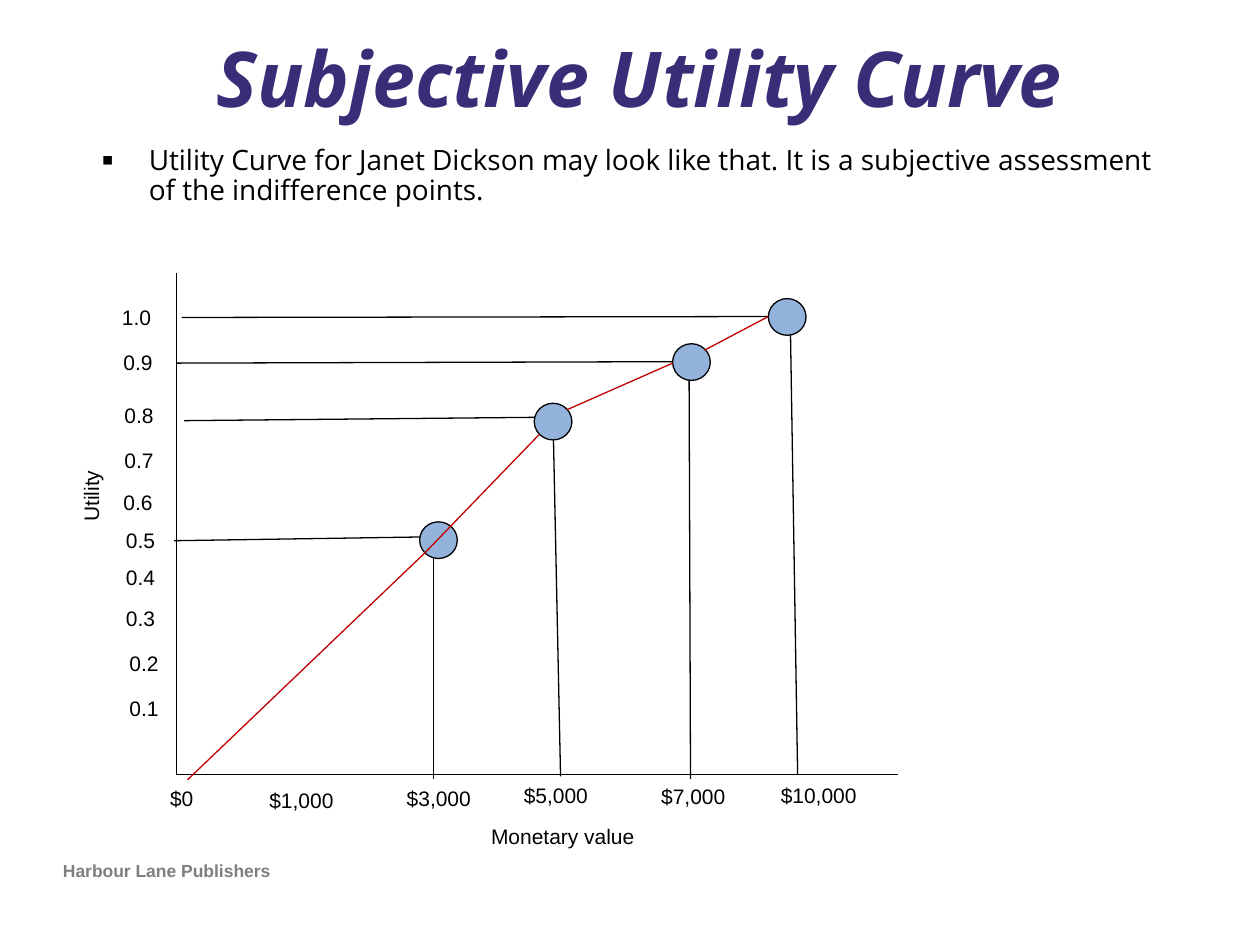
from pptx import Presentation
from pptx.dml.color import RGBColor
from pptx.enum import shapes, text
from pptx.oxml import parse_xml
from pptx.oxml.ns import nsdecls, qn
from pptx.util import Cm, Pt

BLACK = RGBColor(0, 0, 0)
PURPLE = RGBColor(0x3A, 0x2C, 0x76)
GREY = RGBColor(0x7F, 0x7F, 0x7F)
BLUE = RGBColor(0x93, 0xB3, 0xDD)
RED = RGBColor(0xC0, 0, 0)

LABEL = dict(name="Arial", size=Pt(12))
TITLE = dict(name="Open Sans", size=Pt(44), bold=True, italic=True)
BODY = dict(name="Open Sans", size=Pt(16))
FOOTER = dict(name="Arial", size=Pt(10), bold=True)

# All positions are in centimetres.
LABEL_H = 0.76
DOT_W, DOT_H = 0.76, 0.74
Y_LABEL_W = 1.45

TITLE_TEXT = " Subjective Utility Curve"
BODY_TEXT = ("Utility Curve for Janet Dickson may look like that. "
             "It is a subjective assessment of the indifference points.")
FOOTER_TEXT = "Harbour Lane Publishers"

AXES = [(3.56, 15.62, 18.11, 15.62), (3.56, 5.51, 3.56, 15.62)]
X_LABELS = [  # text, left, top, width
    ("$0", 3.18, 15.72, 1.22),
    ("$1,000", 5.18, 15.75, 1.96),
    ("$3,000", 7.95, 15.72, 1.96),
    ("$5,000", 10.31, 15.65, 1.96),
    ("$7,000", 13.08, 15.67, 1.96),
    ("$10,000", 15.49, 15.65, 2.36),
]
Y_LABELS = [  # text, left, top
    ("0.1", 2.36, 13.89), ("0.2", 2.36, 12.98), ("0.3", 2.29, 12.09),
    ("0.4", 2.29, 11.25), ("0.5", 2.29, 10.52), ("0.6", 2.24, 9.75),
    ("0.7", 2.26, 8.89), ("0.8", 2.26, 8.0), ("0.9", 2.24, 6.93),
    ("1.0", 2.21, 6.02),
]
POINTS = [  # line down to the money axis, line across to utility, dot corner
    ((15.93, 6.38, 16.08, 15.62), (3.66, 6.4, 15.93, 6.38), (15.49, 6.02)),
    ((13.89, 7.24, 13.92, 15.7), (3.56, 7.32, 13.89, 7.29), (13.56, 6.93)),
    ((11.15, 8.51, 11.3, 15.65), (3.71, 8.48, 11.07, 8.41), (10.77, 8.13)),
    ((8.74, 10.8, 8.74, 15.7), (3.51, 10.9, 8.79, 10.82), (8.46, 10.52)),
]
CURVE = [
    (3.78, 15.72, 8.56, 11.15),
    (8.56, 11.15, 10.87, 8.76),
    (11.43, 8.26, 13.56, 7.32),
    (14.2, 7.06, 15.49, 6.38),
]


def add_text(s, content, box, style, color=BLACK):
    sp = s.shapes.add_textbox(*map(Cm, box))
    tf = sp.text_frame
    tf.word_wrap = True
    p = tf.paragraphs[0]
    r = p.add_run()
    r.text = content
    for key, value in style.items():
        setattr(r.font, key, value)
    r.font.color.rgb = color
    return sp


def add_line(s, ends, color=BLACK):
    line = s.shapes.add_connector(shapes.MSO_CONNECTOR.STRAIGHT, *map(Cm, ends))
    line.line.color.rgb = color
    line.line.width = Pt(0.75)
    line._element.spPr.append(parse_xml(f"<a:effectLst {nsdecls('a')}/>"))


def add_dot(s, left, top):
    sp = s.shapes.add_shape(shapes.MSO_SHAPE.OVAL,
                            *map(Cm, (left, top, DOT_W, DOT_H)))
    sp.shadow.inherit = False
    sp.fill.solid()
    sp.fill.fore_color.rgb = BLUE
    sp.line.color.rgb = BLACK
    sp.line.width = Pt(0.75)


def add_bullet(p, indent):
    pPr = p._p.get_or_add_pPr()
    pPr.set("marL", str(indent))
    pPr.set("indent", str(-indent))
    for tag, key, value in (("a:buSzPct", "val", "123000"),
                            ("a:buFont", "typeface", "Arial"),
                            ("a:buChar", "char", "▪")):
        pPr.append(parse_xml(f'<{tag} {nsdecls("a")} {key}="{value}"/>'))


def main():
    prs = Presentation()
    prs.slide_width, prs.slide_height = Cm(25.4), Cm(19.05)
    s = prs.slides.add_slide(prs.slide_layouts[6])

    title = add_text(s, TITLE_TEXT, (1.9, 0.76, 21.6, 1.83), TITLE, PURPLE)
    title.text_frame.vertical_anchor = text.MSO_ANCHOR.MIDDLE
    p = title.text_frame.paragraphs[0]
    p.alignment = text.PP_ALIGN.CENTER
    p.line_spacing = 0.9

    body = add_text(s, BODY_TEXT, (1.8, 2.82, 21.8, 12.8), BODY)
    p = body.text_frame.paragraphs[0]
    p.line_spacing = 0.9
    add_bullet(p, Cm(0.95))

    add_text(s, FOOTER_TEXT, (1.02, 17.22, 10.52, 0.71), FOOTER, GREY)

    for ends in AXES:
        add_line(s, ends)
    add_text(s, "Utility", (0.41, 8.97, 2.84, LABEL_H), LABEL).rotation = 270
    add_text(s, "Monetary value", (9.65, 16.48, 4.55, LABEL_H), LABEL)
    for label, left, top, width in X_LABELS:
        add_text(s, label, (left, top, width, LABEL_H), LABEL)
    for label, left, top in Y_LABELS:
        add_text(s, label, (left, top, Y_LABEL_W, LABEL_H), LABEL)

    for drop, level, corner in POINTS:
        add_line(s, drop)
        add_line(s, level)
        add_dot(s, *corner)
    for ends in CURVE:
        add_line(s, ends, RED)

    prs.save("out.pptx")


if __name__ == "__main__":
    main()
